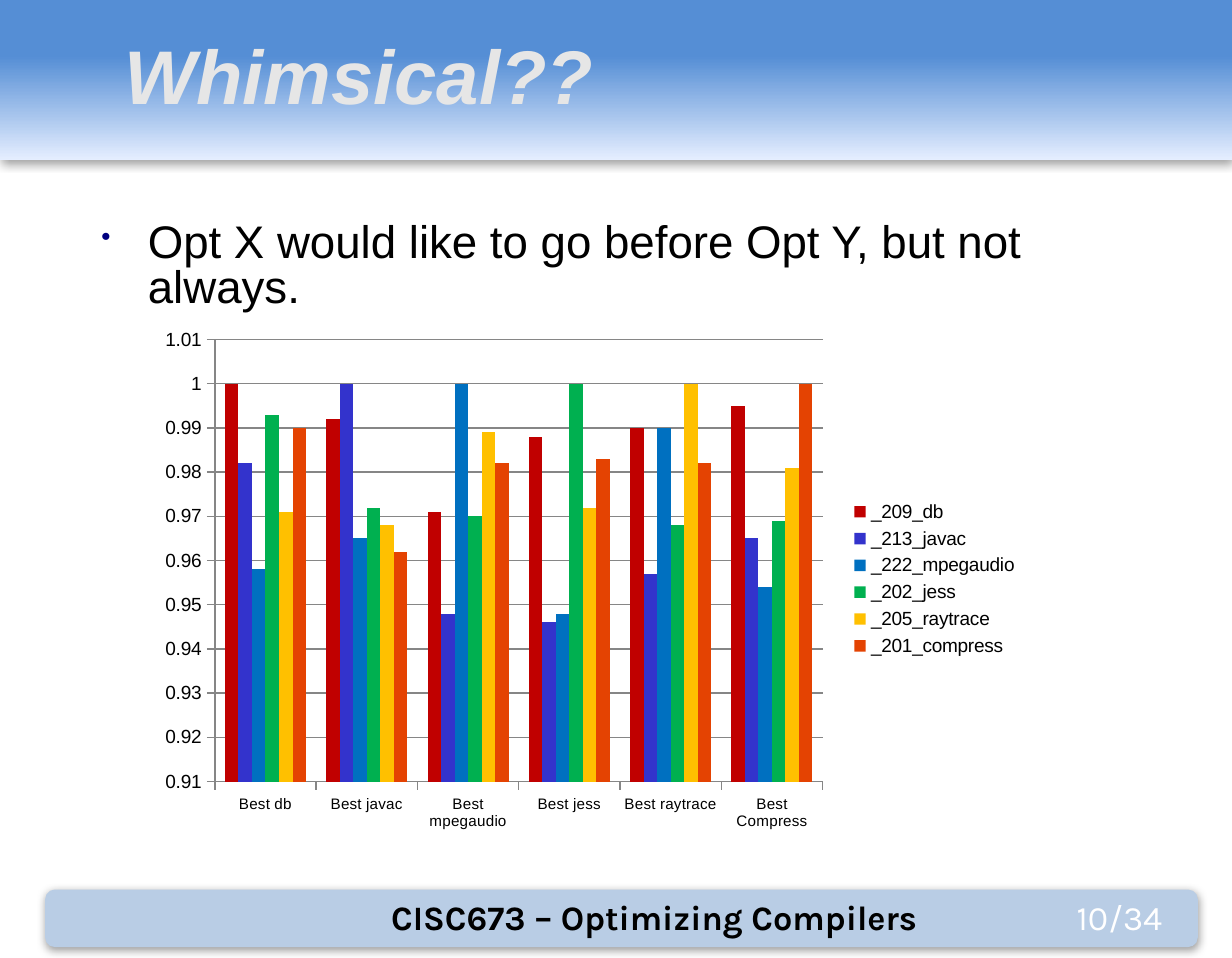
"""Build the slide on benchmark results per optimisation order."""
from copy import deepcopy

from pptx import Presentation
from pptx.chart.data import CategoryChartData
from pptx.dml.color import RGBColor
from pptx.enum.chart import XL_CHART_TYPE as CT, XL_LEGEND_POSITION as LP, XL_TICK_MARK as TM
from pptx.enum.shapes import MSO_SHAPE as SHAPE
from pptx.enum.text import MSO_ANCHOR as ANCHOR, PP_ALIGN as ALIGN
from pptx.oxml import parse_xml
from pptx.oxml.ns import nsdecls, qn
from pptx.util import Inches, Pt

CATEGORIES = ["Best db", "Best javac", "Best mpegaudio", "Best jess", "Best raytrace", "Best Compress"]
SERIES = [
    ("_209_db", "C00000", (1, 0.992, 0.971, 0.988, 0.99, 0.995)),
    ("_213_javac", "3333CC", (0.982, 1, 0.948, 0.946, 0.957, 0.965)),
    ("_222_mpegaudio", "0070C0", (0.958, 0.965, 1, 0.948, 0.99, 0.954)),
    ("_202_jess", "00B050", (0.993, 0.972, 0.97, 1, 0.968, 0.969)),
    ("_205_raytrace", "FFC000", (0.971, 0.968, 0.989, 0.972, 1, 0.981)),
    ("_201_compress", "E44302", (0.99, 0.962, 0.982, 0.983, 0.982, 1)),
]


def rgb(color):
    return RGBColor.from_string(color)


def set_font(font, size, color="000000", name="Arial", bold=False, italic=False):
    font.size, font.name, font.bold, font.italic = Pt(size), name, bold, italic
    font.color.rgb = rgb(color)


def layout(x, y, w, h, inner=False):
    target = '<c:layoutTarget val="inner"/>' if inner else ""
    sizes = "".join(f'<c:{k} val="{v}"/>' for k, v in zip("xywh", (x, y, w, h)))
    return parse_xml(f'<c:layout {nsdecls("c")}><c:manualLayout>{target}<c:xMode val="edge"/>'
                     f'<c:yMode val="edge"/>{sizes}</c:manualLayout></c:layout>')


class Deck:
    """Holds the style and the current slide."""
    grid = "868686"

    def __init__(self, width, height):
        self.prs = Presentation()
        self.prs.slide_width, self.prs.slide_height = Inches(width), Inches(height)
        self.s = self.prs.slides.add_slide(self.prs.slide_layouts[6])

    def bar(self, box, kind=SHAPE.RECTANGLE, fill=None, stops=()):
        sp = self.s.shapes.add_shape(kind, *map(Inches, box))
        sp.line.fill.background()
        if fill:
            sp.fill.solid()
            sp.fill.fore_color.rgb = rgb(fill)
        else:
            sp.fill.gradient()
            sp.fill.gradient_angle = 270
            gs_list = sp._element.spPr.find(".//" + qn("a:gsLst"))
            while len(gs_list) < len(stops):
                gs_list.append(deepcopy(gs_list[0]))
            for stop, (position, color) in zip(sp.fill.gradient_stops, stops):
                stop.position, stop.color.rgb = position, rgb(color)
        sp.shadow.inherit = False
        sp._element.spPr.find(qn("a:effectLst")).append(parse_xml(
            f'<a:outerShdw {nsdecls("a")} blurRad="{Pt(5)}" dist="{Pt(1.6)}" dir="5400000" '
            'rotWithShape="0"><a:srgbClr val="000000"><a:alpha val="38000"/></a:srgbClr></a:outerShdw>'))

    def text(self, box, text, align=ALIGN.LEFT, anchor=ANCHOR.TOP, inset=0, spacing=1, bullet=None, **font):
        tf = self.s.shapes.add_textbox(*map(Inches, box)).text_frame
        tf.word_wrap, tf.vertical_anchor = True, anchor
        tf.margin_left = tf.margin_right = Inches(inset)
        tf.margin_top = tf.margin_bottom = Inches(inset / 2)
        p = tf.paragraphs[0]
        p.alignment, p.line_spacing = align, spacing
        if bullet:
            pPr = p._p.get_or_add_pPr()
            pPr.set("marL", str(Inches(0.46)))
            pPr.set("indent", str(Inches(-0.34)))
            for tag in (f'buClr {nsdecls("a")}><a:srgbClr val="{bullet}"/></a:buClr',
                        f'buSzPct {nsdecls("a")} val="60000"/',
                        f'buChar {nsdecls("a")} char="•"/'):
                pPr.append(parse_xml(f"<a:{tag}>"))
        r = p.add_run()
        r.text = text
        set_font(r.font, **font)

    def axis(self, axis, size):
        axis.major_tick_mark, axis.minor_tick_mark = TM.OUTSIDE, TM.NONE
        axis.format.line.color.rgb = rgb(self.grid)
        axis.format.line.width = Pt(0.75)
        set_font(axis.tick_labels.font, size)

    def chart(self, box, categories, series):
        data = CategoryChartData()
        data.categories = categories
        for name, _, values in series:
            data.add_series(name, values)
        chart = self.s.shapes.add_chart(CT.COLUMN_CLUSTERED, *map(Inches, box), data).chart
        set_font(chart.font, 10)
        chart.has_title = False
        plot = chart.plots[0]
        plot.gap_width, plot.overlap, plot.vary_by_categories = 150, 0, False
        for ser, (_, color, _) in zip(plot.series, series):
            ser.invert_if_negative = False
            ser.format.fill.solid()
            ser.format.fill.fore_color.rgb = rgb(color)
        self.axis(chart.category_axis, 8)
        value_axis = chart.value_axis
        self.axis(value_axis, 10)
        value_axis.minimum_scale, value_axis.maximum_scale, value_axis.major_unit = 0.91, 1.01, 0.01
        value_axis.has_major_gridlines = True
        value_axis.major_gridlines.format.line.color.rgb = rgb(self.grid)
        value_axis.major_gridlines.format.line.width = Pt(0.75)
        chart.has_legend = True
        legend = chart.legend
        legend.position, legend.include_in_layout = LP.RIGHT, False
        set_font(legend.font, 10)
        legend_pos = legend._element.find(qn("c:legendPos"))
        area = chart._chartSpace.find(".//" + qn("c:plotArea"))
        for parent in (area, legend._element):
            for old in parent.findall(qn("c:layout")):
                parent.remove(old)
        legend_pos.addnext(layout(0.77, 0.34, 0.22, 0.32))
        area.insert(0, layout(0.075, 0.04, 0.68, 0.85, inner=True))


def main():
    deck = Deck(9, 7)
    deck.bar((0, 0, 9, 1.17), stops=((0, "558ED5"), (0.35, "558ED5"), (1, "E5EEFF")))
    deck.bar((0.33, 6.5, 8.42, 0.42), SHAPE.ROUNDED_RECTANGLE, fill="B9CDE5")
    deck.text((2.58, 6.5, 4.4, 0.4), "CISC673 – Optimizing Compilers", align=ALIGN.CENTER,
              inset=0.1, size=18, name="Karla", bold=True)
    deck.text((7.09, 6.5, 1.5, 0.4), "10/34", align=ALIGN.RIGHT, inset=0.1,
              size=18, name="Karla", color="FFFFFF")
    deck.text((0.91, -0.03, 8.43, 1.28), "Whimsical??", anchor=ANCHOR.MIDDLE, spacing=0.76,
              size=40, color="E6E6E6", bold=True, italic=True)
    deck.text((0.62, 1.63, 7.55, 4.04), "Opt X would like to go before Opt Y, but not always.",
              spacing=0.82, bullet="000080", size=24)
    deck.chart((1.08, 2.33, 6.53, 3.8), CATEGORIES, SERIES)
    deck.prs.save("out.pptx")


if __name__ == "__main__":
    main()
